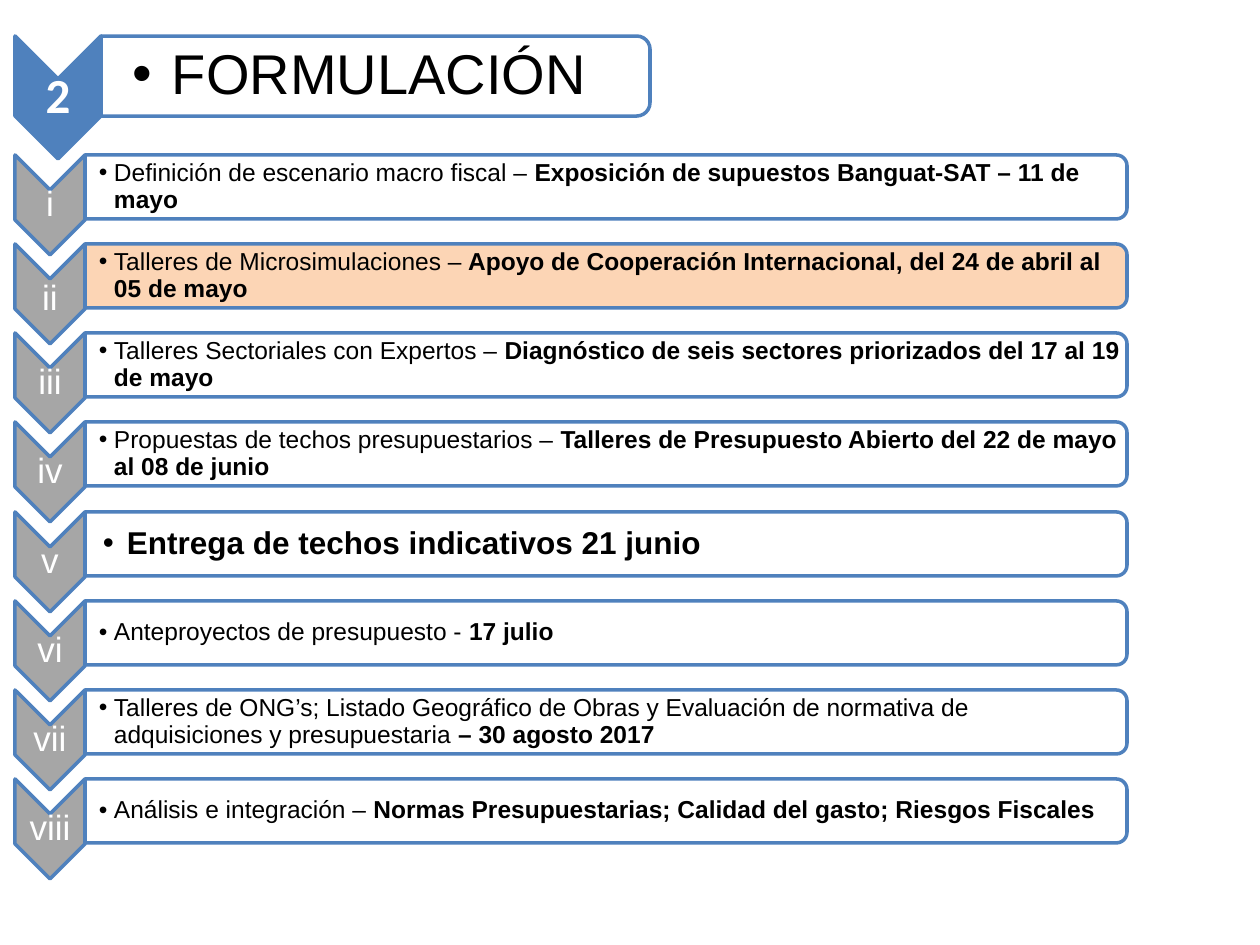
from lxml.etree import SubElement as Sub
from pptx import Presentation
from pptx.dml.color import RGBColor as RGB
from pptx.enum.shapes import MSO_SHAPE as Kind
from pptx.enum.text import MSO_ANCHOR as Anchor, PP_ALIGN as Align
from pptx.oxml.ns import qn
from pptx.util import Pt

SCALE = 914400 / 126
BLUE = RGB(0x4F, 0x81, 0xBD)
GRAY = RGB(0xA6, 0xA6, 0xA6)
PEACH = RGB(0xFC, 0xD5, 0xB5)
WHITE = RGB(255, 255, 255)
BLACK = RGB(0, 0, 0)

STEPS = [
    ("i", "Definición de escenario macro fiscal – ",
     "Exposición de supuestos Banguat-SAT – 11 de mayo"),
    ("ii", "Talleres de Microsimulaciones –",
     " Apoyo de Cooperación Internacional, del 24 de abril al 05 de mayo"),
    ("iii", "Talleres Sectoriales con Expertos – ",
     "Diagnóstico de seis sectores priorizados del 17 al 19 de mayo"),
    ("iv", "Propuestas de techos presupuestarios – ",
     "Talleres de Presupuesto Abierto del 22 de mayo al 08 de junio"),
    ("v", "", "Entrega de techos indicativos 21 junio"),
    ("vi", "Anteproyectos de presupuesto - ", "17 julio"),
    ("vii", "Talleres de ONG’s; Listado Geográfico de Obras y Evaluación de "
     "normativa de adquisiciones y presupuestaria ", "– 30 agosto 2017"),
    ("viii", "Análisis e integración – ",
     "Normas Presupuestarias; Calidad del gasto; Riesgos Fiscales"),
]


def px(num):
    """Turn px into EMU."""
    return round(num * SCALE)


class Deck:
    """Holds the style and the current slide."""

    def __init__(self):
        """Start a deck with one blank slide."""
        self.file = Presentation()
        self.file.slide_width, self.file.slide_height = px(1260), px(945)
        self.page = self.file.slides.add_slide(self.file.slide_layouts[6])

    def turned(self, kind, x, y, w, h, fill, alpha=100):
        """Draw a shape turned by 90 degrees that shows in the given box."""
        left, top = x + (w - h) / 2, y + (h - w) / 2
        shape = self.page.shapes.add_shape(kind, px(left), px(top), px(h), px(w))
        shape.rotation = 90
        shape.shadow.inherit = False
        shape.fill.solid()
        shape.fill.fore_color.rgb = fill
        shape.line.color.rgb = BLUE
        shape.line.width = Pt(2)
        if alpha < 100:
            color = shape.fill._xPr.find(qn("a:solidFill"))[0]
            Sub(color, qn("a:alpha")).set("val", str(alpha * 1000))

    def text(self, x, y, w, h, plain, bold, size, color, pad, left,
             indent=0, font="Arial", anchor=Anchor.MIDDLE):
        """Write a plain part and a bold part, with a bullet if indented."""
        frame = self.page.shapes.add_textbox(px(x), px(y), px(w), px(h)).text_frame
        frame.word_wrap = True
        frame.vertical_anchor = anchor
        frame.margin_left = px(left)
        frame.margin_top = frame.margin_right = frame.margin_bottom = px(pad)
        para = frame.paragraphs[0]
        para.line_spacing = 0.9
        para.alignment = Align.LEFT if indent else Align.CENTER
        if indent:
            props = para._p.get_or_add_pPr()
            props.set("marL", str(px(indent)))
            props.set("indent", str(px(-indent)))
            Sub(props, qn("a:buFont")).set("typeface", "Arial")
            Sub(props, qn("a:buChar")).set("char", "•")
        for part, heavy in ((plain, False), (bold, True)):
            if part:
                run = para.add_run()
                run.text = part
                run.font.name, run.font.size = font, Pt(size)
                run.font.bold = heavy
                run.font.color.rgb = color

    def head(self):
        """Draw the numbered title."""
        self.turned(Kind.CHEVRON, 15, 36, 86, 123, BLUE)
        self.text(15, 79, 86, 37, "", "2", 28, WHITE, 2, 2, font="Calibri")
        self.turned(Kind.ROUND_2_SAME_RECTANGLE, 101, 36, 549, 80, WHITE, 90)
        self.text(101, 40, 544, 72, "FORMULACIÓN", "", 32, BLACK, 2, 32, 39)

    def step(self, row, mark, plain, bold):
        """Draw one step of the list."""
        y = 155 + row * 357 // 4
        fill = PEACH if mark == "ii" else WHITE
        anchor = Anchor.TOP if mark == "ii" else Anchor.MIDDLE
        size, left, indent = (14, 14, 15) if plain else (18, 18, 24)
        self.turned(Kind.CHEVRON, 15, y, 70, 100, GRAY)
        self.text(15, y + 35, 70, 30, mark, "", 20, WHITE, 1, 1, anchor=anchor)
        self.turned(Kind.ROUND_2_SAME_RECTANGLE, 85, y, 1042, 64, fill,
                    90 if row > 4 else 100)
        self.text(85, y + 3, 1038, 58, plain, bold, size, BLACK, 1, left, indent)


def main():
    """Build and save the slide."""
    deck = Deck()
    deck.head()
    for row, step in enumerate(STEPS):
        deck.step(row, *step)
    deck.file.save("out.pptx")


if __name__ == "__main__":
    main()
